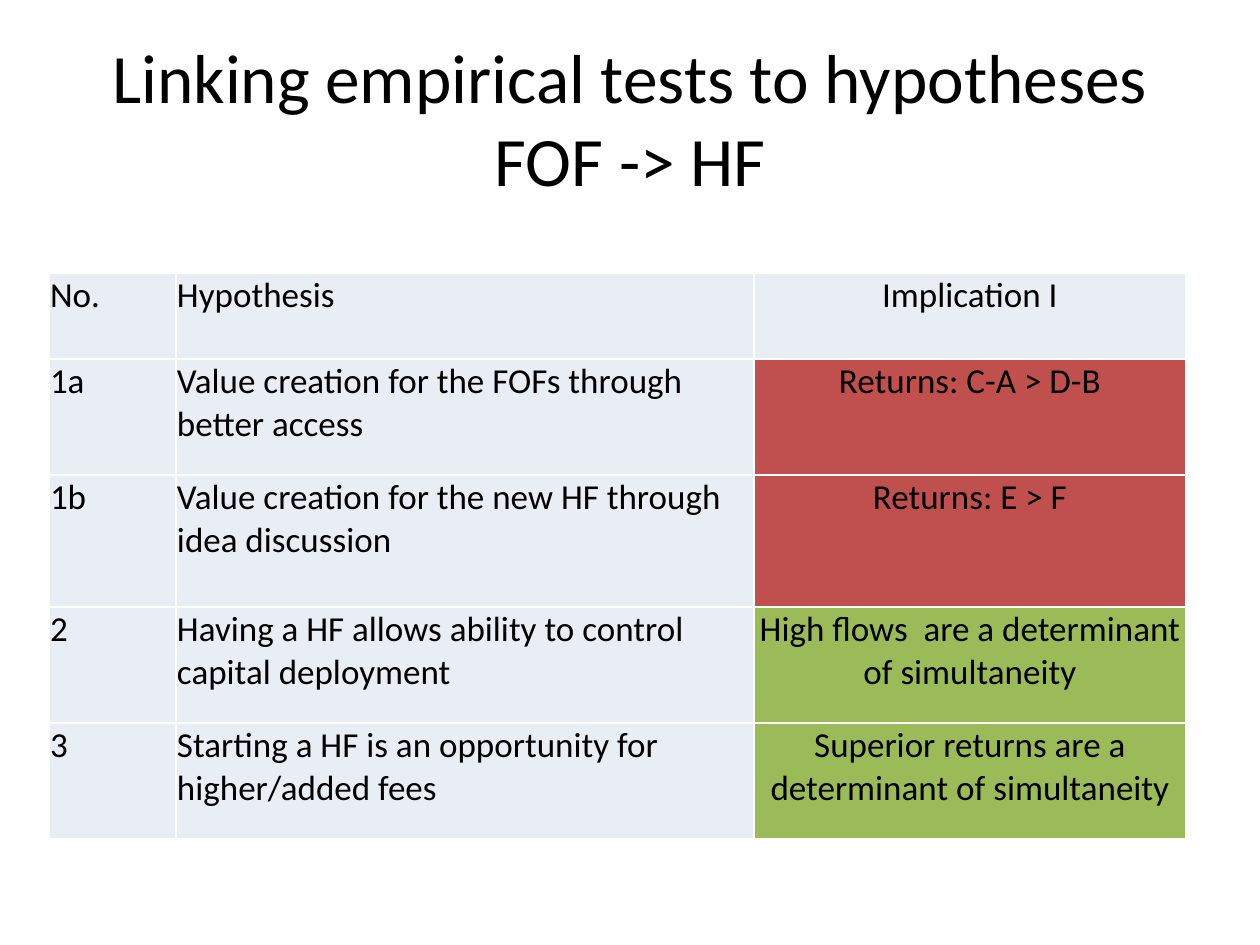
import pptx
import pptx.util
import pptx.dml.color
import pptx.enum.text
from dataclasses import dataclass
from lxml import etree

ALIGN = pptx.enum.text.PP_ALIGN
ANCHOR = pptx.enum.text.MSO_ANCHOR
SCALE = 914400 / 126  # EMU in one px


def px(count):
    return pptx.util.Emu(round(count * SCALE))


def rgb(code):
    return pptx.dml.color.RGBColor.from_string(code)


@dataclass(frozen=True)
class Theme:
    font: str = "Calibri"
    ink: str = "000000"
    rule: str = "FFFFFF"
    plain: str = "E9EDF4"
    red: str = "C0504D"
    green: str = "9BBB59"
    title: float = 39.6
    body: float = 20


class Deck:
    def __init__(self, theme):
        self.theme = theme
        self.prs = pptx.Presentation()
        self.prs.slide_width, self.prs.slide_height = px(1260), px(945)
        self.slide = self.prs.slides.add_slide(self.prs.slide_layouts[5])

    def run(self, para, text, size):
        run = para.add_run()
        run.text = text
        run.font.name = self.theme.font
        run.font.size = pptx.util.Pt(size)
        run.font.color.rgb = rgb(self.theme.ink)

    def title(self, lines, left, top, width, height):
        shape = self.slide.shapes.title
        shape.left, shape.top = px(left), px(top)
        shape.width, shape.height = px(width), px(height)
        frame = shape.text_frame
        frame.word_wrap = True
        frame.vertical_anchor = ANCHOR.MIDDLE
        para = frame.paragraphs[0]
        para.alignment = ALIGN.CENTER
        for i, line in enumerate(lines):
            if i:
                para.add_line_break()
            self.run(para, line, self.theme.title)

    def border(self, cell):
        props = cell._tc.get_or_add_tcPr()
        for side in ("L", "R", "T", "B"):
            props.append(pptx.oxml.parse_xml(
                f'<a:ln{side} w="12700" xmlns:a="http://schemas.openxmlformats.org/drawingml/2006/main">'
                f'<a:solidFill><a:srgbClr val="{self.theme.rule}"/></a:solidFill></a:ln{side}>'))

    def cell(self, cell, text, fill, align):
        cell.margin_left = cell.margin_right = cell.margin_top = px(1)
        cell.margin_bottom = 0
        cell.vertical_anchor = ANCHOR.TOP
        self.border(cell)
        cell.fill.solid()
        cell.fill.fore_color.rgb = rgb(fill)
        para = cell.text_frame.paragraphs[0]
        para.alignment = align
        self.run(para, text, self.theme.body)

    def table(self, rows, left, top, widths, heights):
        frame = self.slide.shapes.add_table(
            len(rows), len(widths), px(left), px(top), px(sum(widths)), px(sum(heights)))
        table = frame.table
        table.first_row = table.horz_banding = False
        for col, width in zip(table.columns, widths):
            col.width = px(width)
        for row, height, (texts, tint) in zip(table.rows, heights, rows):
            row.height = px(height)
            *_, last = row.cells
            for cell, text in zip(row.cells, texts):
                end = text == texts[-1]
                self.cell(cell, text, tint if end else self.theme.plain,
                          ALIGN.CENTER if end else ALIGN.LEFT)


def main():
    theme = Theme()
    deck = Deck(theme)

    # Title
    deck.title(["Linking empirical tests to hypotheses", "FOF -> HF"], 63, 38, 1134, 158)

    # Hypotheses, with the tint of each implication
    rows = [
        (("No.", "Hypothesis", "Implication I"), theme.plain),
        (("1a", "Value creation for the FOFs through better access",
          "Returns: C-A > D-B"), theme.red),
        (("1b", "Value creation for the new HF through idea discussion",
          "Returns: E > F"), theme.red),
        (("2", "Having a HF allows ability to control capital deployment",
          "High flows  are a determinant of simultaneity"), theme.green),
        (("3", "Starting a HF is an opportunity for higher/added fees",
          "Superior returns are a determinant of simultaneity"), theme.green),
    ]
    deck.table(rows, 49, 273, [127, 578, 432], [86, 116, 132, 116, 116])

    deck.prs.save("out.pptx")


if __name__ == "__main__":
    main()
